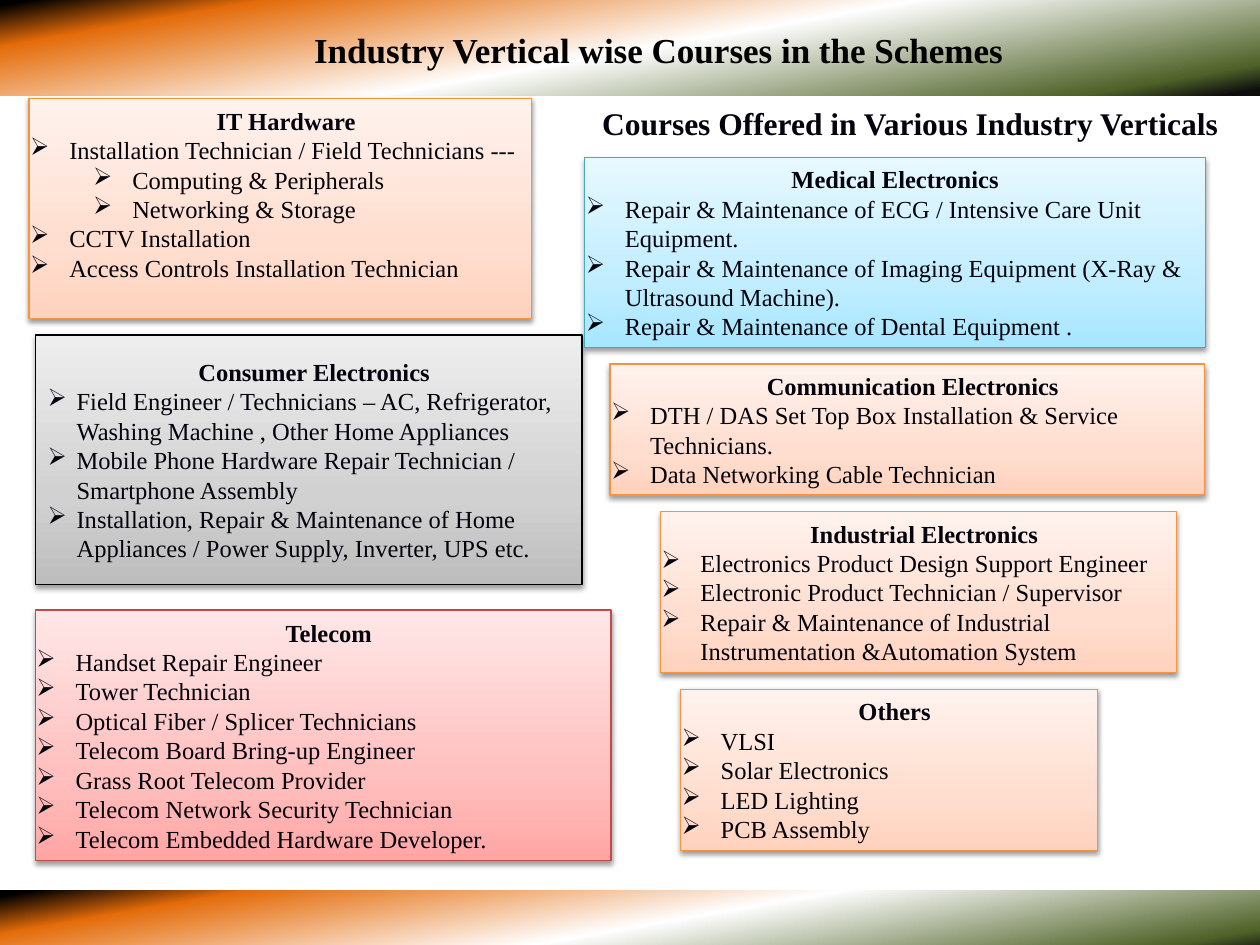
from lxml.etree import SubElement
from pptx import Presentation
from pptx.dml.color import RGBColor
from pptx.enum.shapes import MSO_SHAPE
from pptx.enum.text import MSO_ANCHOR, PP_ALIGN
from pptx.oxml.ns import qn
from pptx.util import Inches, Pt

FONT = "Times New Roman"
BLACK = RGBColor(0x00, 0x00, 0x00)
INK = RGBColor(0x03, 0x03, 0x0D)


def color_stops(*stops):
    return [(position, RGBColor.from_string(color)) for position, color in stops]


BAND = color_stops((2, "0D0D0D"), (10, "4F6228"), (49, "FFFFFF"), (85, "E46C0A"), (98, "000000"))
# Each theme is a line colour and the gradient stops from bottom to top
ORANGE = (RGBColor(0xF6, 0x92, 0x40), color_stops((0, "FFD2BD"), (35, "FFDED0"), (100, "FFF2ED")))
RED = (RGBColor(0xBF, 0x4C, 0x48), color_stops((0, "FFA6A5"), (35, "FFC0BF"), (100, "FFE7E7")))
GRAY = (BLACK, color_stops((0, "BDBDBD"), (35, "D1D1D1"), (100, "EEEEEE")))
BLUE = (RGBColor(0x46, 0xAA, 0xC5), color_stops((0, "A7E6FF"), (35, "C1EDFF"), (100, "E7F8FF")))

TITLE = "Industry Vertical wise Courses in the Schemes"
SUBTITLE = "Courses Offered in Various Industry Verticals"
BANDS = [(-0.02, 7.07, 10.02, 0.54), (0, -0.01, 10.02, 0.77)]

# An item is a text, or a list of second-level texts
VERTICALS = [
    dict(heading="Industrial Electronics", at=(5.24, 4.06, 4.1, 1.28), theme=ORANGE, items=[
        "Electronics Product Design Support Engineer",
        "Electronic Product Technician / Supervisor",
        "Repair & Maintenance of Industrial Instrumentation &Automation System",
    ]),
    dict(heading="Telecom", at=(0.28, 4.84, 4.57, 1.99), theme=RED, items=[
        "Handset Repair Engineer",
        "Tower Technician",
        "Optical Fiber / Splicer Technicians",
        "Telecom Board Bring-up Engineer",
        "Grass Root Telecom Provider",
        "Telecom Network Security Technician",
        "Telecom Embedded Hardware Developer.",
    ]),
    dict(heading="Consumer Electronics", at=(0.28, 2.66, 4.34, 1.98), theme=GRAY,
         heading_indent=0, left_inset=0.1, hanging=0.23, items=[
        "Field Engineer / Technicians – AC, Refrigerator, Washing Machine , Other Home Appliances",
        "Mobile Phone Hardware Repair Technician / Smartphone Assembly",
        "Installation, Repair & Maintenance of Home Appliances / Power Supply, Inverter, UPS etc.",
    ]),
    dict(heading="Medical Electronics", at=(4.64, 1.25, 4.93, 1.51), theme=BLUE,
         heading_indent=0, items=[
        "Repair & Maintenance of ECG / Intensive Care Unit Equipment.",
        "Repair & Maintenance of Imaging Equipment (X-Ray & Ultrasound Machine).",
        "Repair & Maintenance of Dental Equipment .",
    ]),
    dict(heading="Communication Electronics", at=(4.84, 2.89, 4.72, 1.04), theme=ORANGE, items=[
        "DTH / DAS Set Top Box Installation & Service Technicians.",
        "Data Networking Cable Technician",
    ]),
    dict(heading="IT Hardware", at=(0.23, 0.78, 3.99, 1.75), theme=ORANGE, bottom_inset=0.28, items=[
        "Installation Technician / Field Technicians ---",
        ["Computing & Peripherals", "Networking & Storage"],
        "CCTV Installation",
        "Access Controls Installation Technician",
    ]),
    dict(heading="Others", at=(5.4, 5.47, 3.31, 1.28), theme=ORANGE, items=[
        "VLSI", "Solar Electronics", "LED Lighting", "PCB Assembly",
    ]),
]


def write(paragraph, text, size=14, color=INK, bold=False, align=PP_ALIGN.LEFT,
          margin=0, hanging=0, level=0, bullet=None):
    paragraph.alignment = align
    paragraph.level = level
    properties = paragraph._p.get_or_add_pPr()
    properties.set("marL", str(Inches(margin)))
    properties.set("indent", str(-Inches(hanging)))
    if bullet:
        SubElement(properties, qn("a:buChar")).set("char", bullet)
    else:
        SubElement(properties, qn("a:buNone"))
    run = paragraph.add_run()
    run.text = text
    run.font.name = FONT
    run.font.size = Pt(size)
    run.font.bold = bold
    run.font.color.rgb = color


def add_gradient_box(slide, at, stops, angle):
    box = slide.shapes.add_shape(MSO_SHAPE.RECTANGLE, *map(Inches, at))
    box.shadow.inherit = False
    box.line.fill.background()
    box.fill.gradient()
    gradient = box._element.spPr.find(qn("a:gradFill"))
    for child in list(gradient):
        gradient.remove(child)
    stop_list = SubElement(gradient, qn("a:gsLst"))
    for position, color in stops:
        stop = SubElement(stop_list, qn("a:gs"), pos=str(position * 1000))
        SubElement(stop, qn("a:srgbClr"), val=str(color))
    SubElement(gradient, qn("a:lin"), ang=str(angle * 60000), scaled="0")
    return box


def add_soft_shadow(shape):
    effects = shape._element.spPr.find(qn("a:effectLst"))
    shadow = SubElement(effects, qn("a:outerShdw"), blurRad=str(Pt(3.1)), dist=str(Pt(1.6)),
                        dir=str(90 * 60000), rotWithShape="0")
    color = SubElement(shadow, qn("a:srgbClr"), val=str(BLACK))
    SubElement(color, qn("a:alpha"), val="38000")


def add_vertical(slide, heading, at, theme, items, heading_indent=0.09,
                 left_inset=0.01, bottom_inset=0.05, hanging=0.31):
    line_color, stops = theme
    box = add_gradient_box(slide, at, stops, 270)
    box.line.color.rgb = line_color
    box.line.width = Pt(0.75)
    add_soft_shadow(box)

    frame = box.text_frame
    frame.word_wrap = True
    frame.vertical_anchor = MSO_ANCHOR.MIDDLE
    frame.margin_left, frame.margin_right = Inches(left_inset), Inches(0.01)
    frame.margin_top, frame.margin_bottom = Inches(0.05), Inches(bottom_inset)
    write(frame.paragraphs[0], heading, bold=True, align=PP_ALIGN.CENTER, margin=heading_indent)
    for item in items:
        level = int(isinstance(item, list))
        for text in item if level else [item]:
            write(frame.add_paragraph(), text, margin=hanging + level * 0.5,
                  hanging=hanging, level=level, bullet="➢")


def main():
    presentation = Presentation()
    presentation.slide_width, presentation.slide_height = Inches(10), Inches(7.5)
    slide = presentation.slides.add_slide(presentation.slide_layouts[5])

    for at in BANDS:
        add_gradient_box(slide, at, BAND, 260)

    title = slide.shapes.title
    slide.shapes._spTree.append(title._element)  # bring the title in front of the bands
    title.left, title.top, title.width, title.height = map(Inches, (0.31, 0.07, 9.84, 0.58))
    title.text_frame.vertical_anchor = MSO_ANCHOR.MIDDLE
    title_paragraph = title.text_frame.paragraphs[0]
    title_paragraph.line_spacing = 1.2
    write(title_paragraph, TITLE, size=20, color=BLACK, bold=True, align=PP_ALIGN.CENTER)

    for vertical in VERTICALS:
        add_vertical(slide, **vertical)

    subtitle = slide.shapes.add_textbox(*map(Inches, (4.49, 0.78, 5.5, 0.4)))
    subtitle.text_frame.word_wrap = True
    write(subtitle.text_frame.paragraphs[0], SUBTITLE, size=18, bold=True,
          align=PP_ALIGN.JUSTIFY, margin=0.19)

    presentation.save("out.pptx")


if __name__ == "__main__":
    main()
